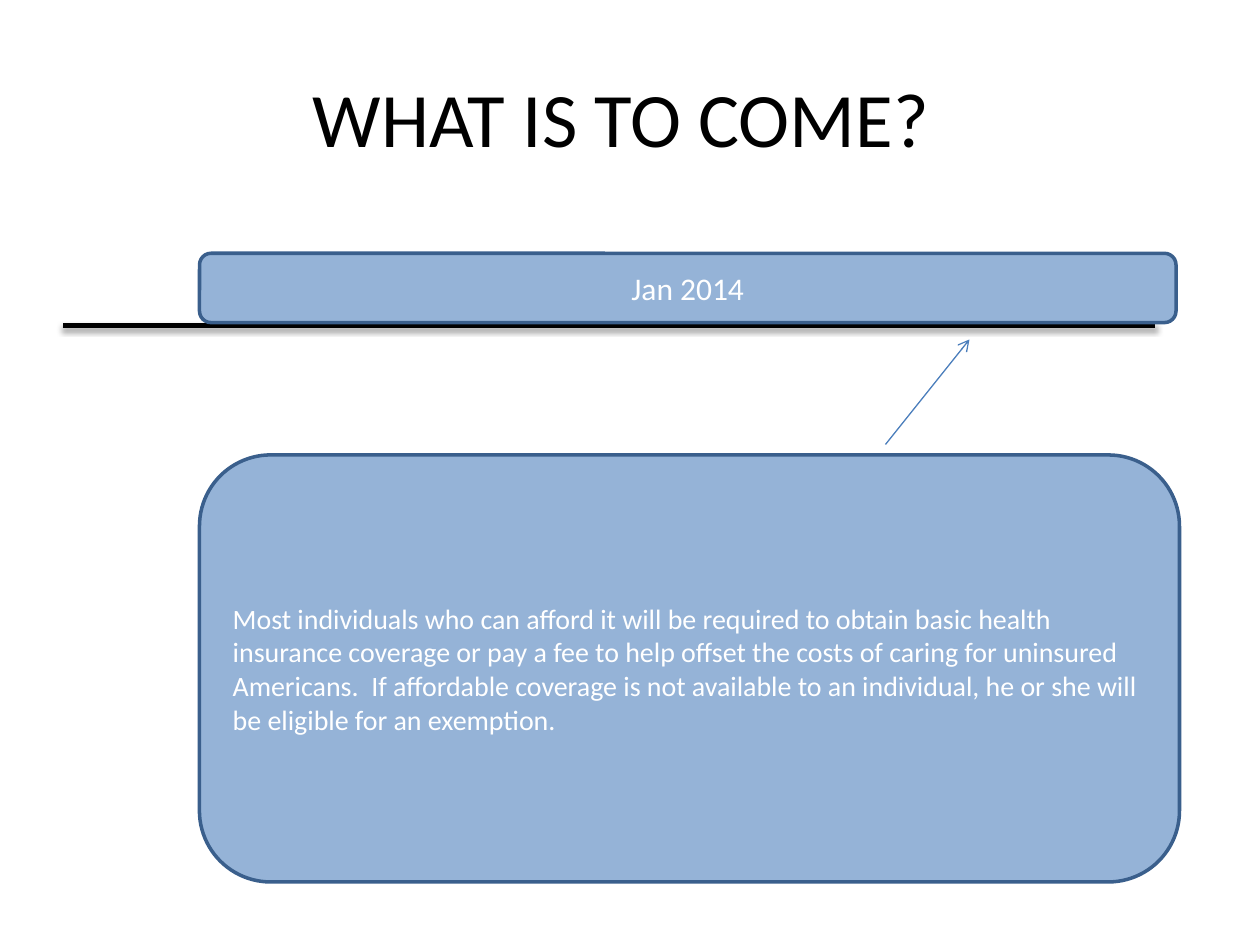
from lxml.etree import SubElement as Sub
from pptx import Presentation
from pptx.dml.color import RGBColor as RGB
from pptx.enum.shapes import MSO_CONNECTOR as Conn, MSO_SHAPE as Shape
from pptx.enum.text import MSO_ANCHOR as Anchor, PP_ALIGN as Align
from pptx.oxml.ns import qn
from pptx.util import Pt

BLACK = RGB(0x00, 0x00, 0x00)
WHITE = RGB(0xFF, 0xFF, 0xFF)
BLUE = RGB(0x95, 0xB3, 0xD7)
EDGE = RGB(0x3A, 0x5F, 0x8C)
ARROW = RGB(0x4B, 0x7E, 0xBC)

RULE = "Most individuals who can afford it will be required to obtain basic health insurance coverage or pay a fee to help offset the costs of caring for uninsured Americans.  If affordable coverage is not available to an individual, he or she will be eligible for an exemption."


def put_text(frame, text, size, color, align):
    frame.word_wrap = True
    frame.vertical_anchor = Anchor.MIDDLE
    para = frame.paragraphs[0]
    para.alignment = align
    run = para.add_run()
    run.text = text
    run.font.name = "Calibri"
    run.font.size = Pt(size)
    run.font.color.rgb = color


def add_title(slide, text):
    title = slide.shapes.title
    title.left, title.top = Pt(36), Pt(21.6)
    title.width, title.height = Pt(648), Pt(90)
    put_text(title.text_frame, text, 44, BLACK, Align.CENTER)


def add_box(slide, top, width, height, text, size, align):
    box = slide.shapes.add_shape(
        Shape.ROUNDED_RECTANGLE, Pt(114), Pt(top), Pt(width), Pt(height))
    box.shadow.inherit = False
    box.fill.solid()
    box.fill.fore_color.rgb = BLUE
    box.line.color.rgb = EDGE
    box.line.width = Pt(2)
    put_text(box.text_frame, text, size, WHITE, align)


def add_line(slide, start, end, color, width):
    line = slide.shapes.add_connector(Conn.STRAIGHT, *map(Pt, start + end))
    line.line.color.rgb = color
    line.line.width = Pt(width)
    effects = Sub(line._element.spPr, qn("a:effectLst"))
    return line, effects


def add_shade(effects):
    shade = Sub(effects, qn("a:outerShdw"), blurRad=str(Pt(3.1)),
                dist=str(Pt(1.8)), dir="5400000", rotWithShape="0")
    tint = Sub(shade, qn("a:srgbClr"), val=str(BLACK))
    Sub(tint, qn("a:alpha"), val="35000")


def add_head(line):
    Sub(line.line._get_or_add_ln(), qn("a:tailEnd"), type="arrow")


def main():
    deck = Presentation()
    deck.slide_width, deck.slide_height = Pt(720), Pt(540)
    slide = deck.slides.add_slide(deck.slide_layouts[5])
    add_title(slide, "WHAT IS TO COME? ")
    _, effects = add_line(slide, (36, 186), (660, 186), BLACK, 3)
    add_shade(effects)
    arrow, _ = add_line(slide, (506, 254), (554, 194), ARROW, 0.75)
    add_head(arrow)
    add_box(slide, 144.75, 558, 39.6, "Jan 2014", 18, Align.CENTER)
    add_box(slide, 260, 560, 244, RULE, 16, Align.LEFT)
    deck.save("out.pptx")


if __name__ == "__main__":
    main()
